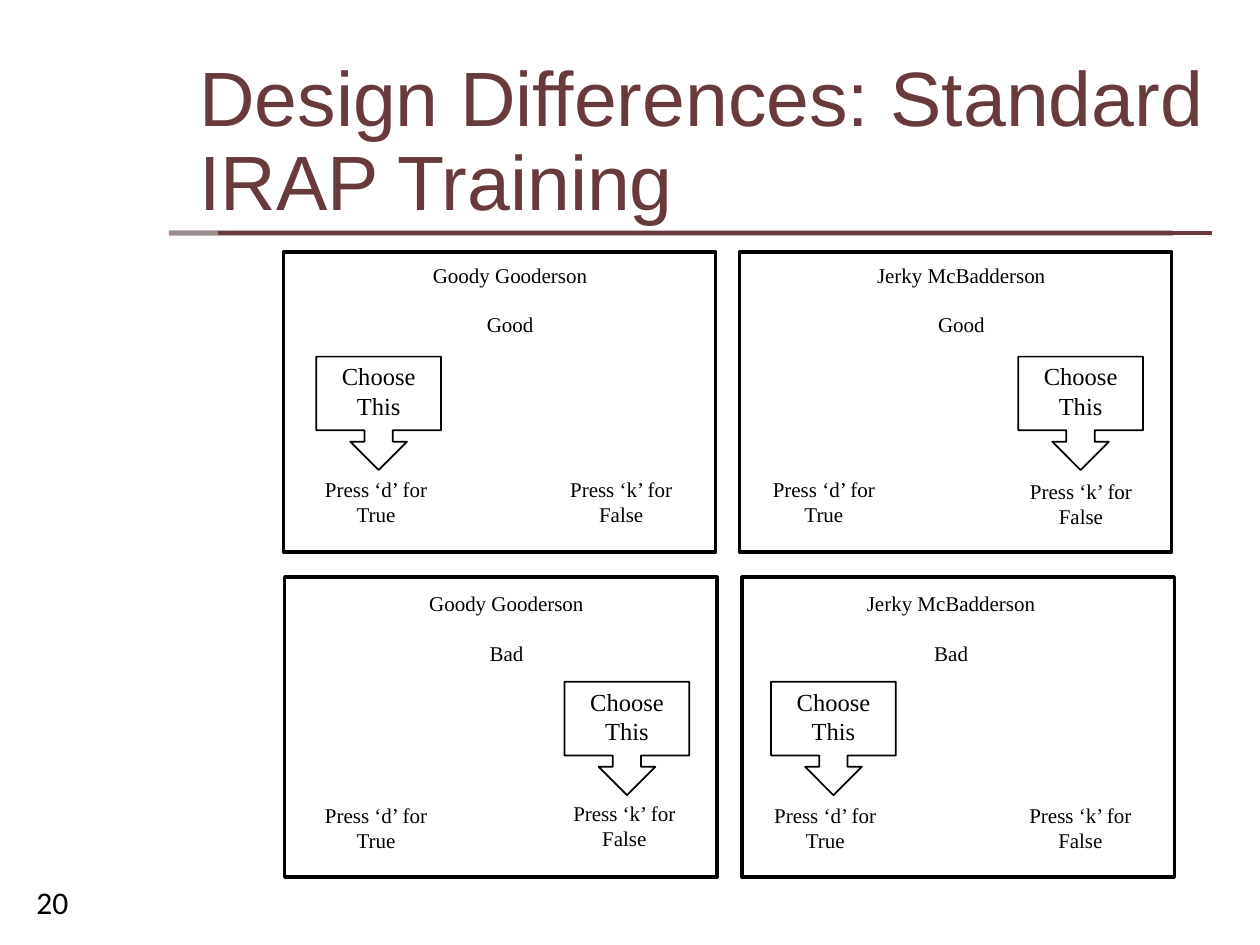
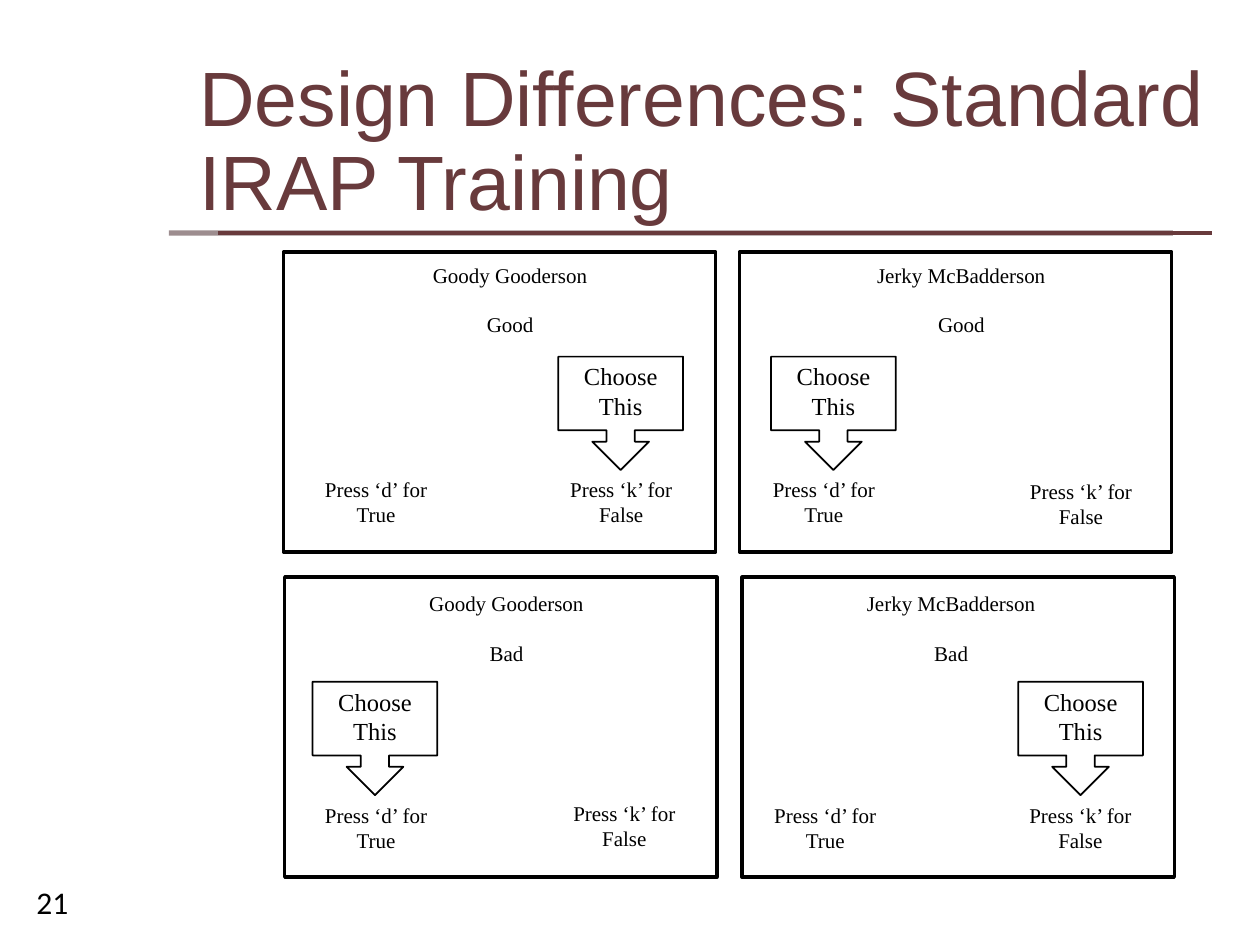
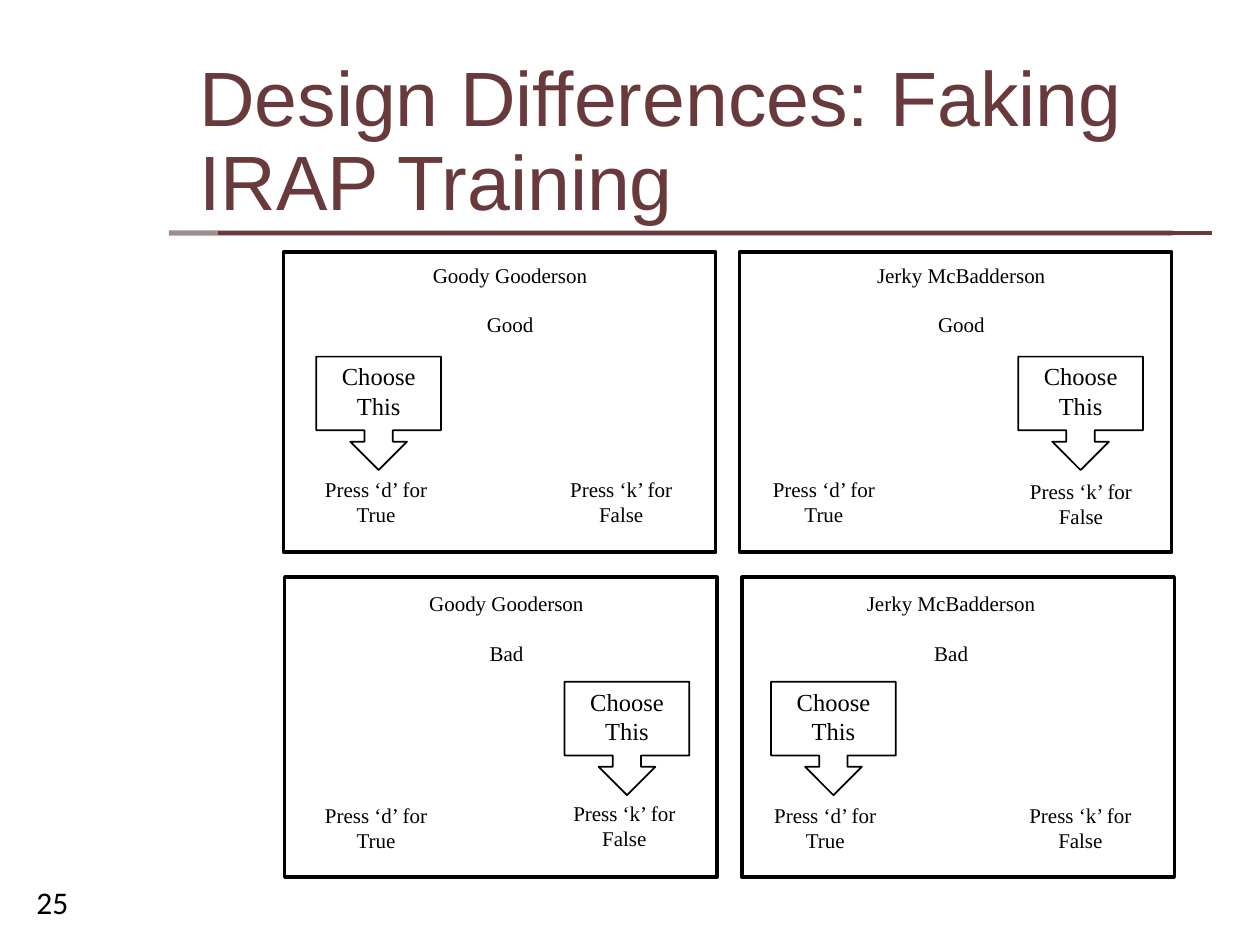
import dataclasses

import lxml.etree
import pptx
import pptx.dml.color
import pptx.enum.shapes
import pptx.enum.text
import pptx.oxml.ns
import pptx.util

Pt = pptx.util.Pt
Align = pptx.enum.text.PP_ALIGN
Preset = pptx.enum.shapes.MSO_SHAPE


@dataclasses.dataclass(frozen=True)
class Theme:
    accent: str = "683A3C"
    shade: str = "3C1C21"
    ink: str = "000000"
    title_font: str = "Arial"
    screen_font: str = "Times New Roman"
    number_font: str = "Calibri"
    title_size: float = 44
    number_size: float = 18
    callout_size: float = 14
    screen_size: float = 12


@dataclasses.dataclass(frozen=True)
class Key:
    label: tuple
    left: float
    top: float
    width: float
    callout_left: float


@dataclasses.dataclass(frozen=True)
class Screen:
    left: float
    top: float
    stimulus: tuple
    stimulus_left: float
    stimulus_top: float
    keys: dict


TRUE = ("Press ‘d’ for", "True")
FALSE = ("Press ‘k’ for", "False")
GOODY = "Goody Gooderson"
JERKY = "Jerky McBadderson"

SCREENS = (
    Screen(162, 144, (GOODY, "Good"), 231.8, 146.2, {
        "d": Key(TRUE, 162.7, 268.6, 104.4, 180.7),
        "k": Key(FALSE, 301.7, 268.6, 106.6, 319)}),
    Screen(422.6, 144, (JERKY, "Good"), 489.6, 146.2, {
        "d": Key(TRUE, 422.6, 268.6, 96.5, 440.6),
        "k": Key(FALSE, 565.9, 270, 103.7, 581.8)}),
    Screen(162.7, 329.8, (GOODY, "Bad"), 229.7, 334.1, {
        "d": Key(TRUE, 162.7, 455, 104.4, 178.6),
        "k": Key(FALSE, 305.3, 454, 103, 322.6)}),
    Screen(424.1, 329.8, (JERKY, "Bad"), 483.8, 334.1, {
        "d": Key(TRUE, 424.1, 455, 95, 440.6),
        "k": Key(FALSE, 565.9, 455, 103, 581.8)}),
)

PAGES = (
    ("Design Differences: Standard IRAP Training", "20", "dkkd"),
    ("Design Differences: Standard IRAP Training", "21", "kddk"),
    ("Design Differences: Faking IRAP Training", "25", "dkkd"),
)


class Builder:
    def __init__(self, deck, theme):
        self.deck = deck
        self.theme = theme
        self.page = None

    def start_page(self, title, number):
        self.page = self.deck.slides.add_slide(self.deck.slide_layouts[5])
        self.rule(96.5, 670.3, self.theme.shade, 3, 50)
        self.rule(124.6, 692.6, self.theme.accent, 2.5)
        self.rule(133.9, 670.3, self.theme.accent, 2.5)
        self.title(title)
        box = self.text((number,), 13.7, 501.1, 36, 28.8,
                        self.theme.number_font, self.theme.number_size, Align.LEFT)
        box.text_frame.word_wrap = False

    def style(self, paragraph, font, size, color, alignment):
        paragraph.alignment = alignment
        paragraph.font.name = font
        paragraph.font.size = Pt(size)
        paragraph.font.color.rgb = pptx.dml.color.RGBColor.from_string(color)

    def title(self, words):
        box = self.page.shapes.title
        box.left, box.top, box.width, box.height = map(Pt, (106.6, 28.8, 613.4, 104.4))
        frame = box.text_frame
        frame.text = words
        frame.word_wrap = True
        frame.auto_size = pptx.enum.text.MSO_AUTO_SIZE.NONE
        frame.vertical_anchor = pptx.enum.text.MSO_ANCHOR.BOTTOM
        paragraph = frame.paragraphs[0]
        paragraph.line_spacing = 0.9
        self.style(paragraph, self.theme.title_font, self.theme.title_size,
                   self.theme.accent, Align.LEFT)

    def rule(self, start, end, color, weight, opacity=100):
        line = self.page.shapes.add_connector(
            pptx.enum.shapes.MSO_CONNECTOR.STRAIGHT, Pt(start), Pt(133.2), Pt(end), Pt(133.2))
        line.line.color.rgb = pptx.dml.color.RGBColor.from_string(color)
        line.line.width = Pt(weight)
        properties = line._element.spPr
        qualify = pptx.oxml.ns.qn
        lxml.etree.SubElement(properties, qualify("a:effectLst"))
        if opacity < 100:
            fill = properties.find(".//" + qualify("a:srgbClr"))
            lxml.etree.SubElement(fill, qualify("a:alpha"), val=str(opacity * 1000))

    def text(self, lines, left, top, width, height, font, size,
             alignment=Align.CENTER, gap=0):
        box = self.page.shapes.add_textbox(Pt(left), Pt(top), Pt(width), Pt(height))
        frame = box.text_frame
        frame.word_wrap = True
        frame.text = "\n".join(lines)
        for paragraph in frame.paragraphs:
            self.style(paragraph, font, size, self.theme.ink, alignment)
        for paragraph in frame.paragraphs[1:]:
            paragraph.space_before = Pt(gap)
        return box

    def outline(self, preset, left, top, width, height, weight):
        shape = self.page.shapes.add_shape(preset, Pt(left), Pt(top), Pt(width), Pt(height))
        shape.shadow.inherit = False
        shape.fill.background()
        shape.line.color.rgb = pptx.dml.color.RGBColor.from_string(self.theme.ink)
        shape.line.width = Pt(weight)

    def callout(self, left, top):
        self.text(("Choose This",), left + 1.5, top - 0.8, 68.4, 41.8,
                  self.theme.screen_font, self.theme.callout_size)
        self.outline(Preset.DOWN_ARROW_CALLOUT, left, top, 71.3, 64.8, 1)

    def screen(self, screen, answer):
        font, size = self.theme.screen_font, self.theme.screen_size
        self.text(screen.stimulus, screen.stimulus_left, screen.stimulus_top,
                  119.5, 87.1, font, size, gap=14)
        for key in screen.keys.values():
            self.text(key.label, key.left, key.top, key.width, 46.8, font, size)
        self.outline(Preset.RECTANGLE, screen.left, screen.top, 247, 171.4, 2)
        self.callout(screen.keys[answer].callout_left, screen.top + 59.8)


def main():
    deck = pptx.Presentation()
    deck.slide_width, deck.slide_height = Pt(720), Pt(540)
    builder = Builder(deck, Theme())
    for title, number, answers in PAGES:
        builder.start_page(title, number)
        for screen, answer in zip(SCREENS, answers):
            builder.screen(screen, answer)
    deck.save("out.pptx")


if __name__ == "__main__":
    main()
